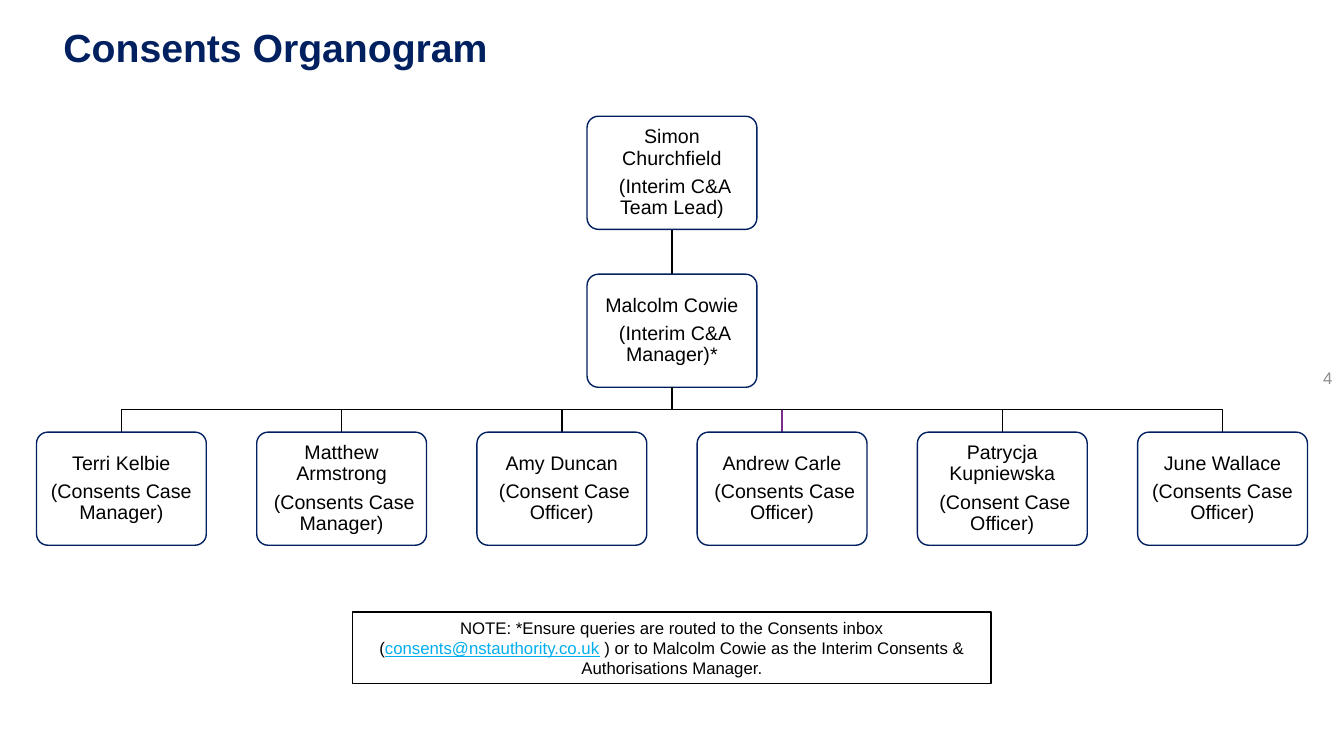
from pptx import Presentation
from pptx.dml.color import RGBColor
from pptx.enum.shapes import MSO_CONNECTOR as Link, MSO_SHAPE as Preset
from pptx.enum.text import MSO_ANCHOR as Anchor, PP_ALIGN as Align
from pptx.oxml.ns import qn
from pptx.util import Cm, Pt
from lxml.etree import SubElement

NAVY, BLACK, WHITE = "002060", "000000", "FFFFFF"
PURPLE, GREY, CYAN = "782D8D", "8C8C8C", "00AEEF"
CARD_WIDTH, CARD_HEIGHT = Cm(4.28), Cm(2.85)
COLUMN_STEP, LEVEL_STEP = Cm(5.55), Cm(3.98)

LEADERS = [
    ("Simon Churchfield", " (Interim C&A Team Lead)"),
    ("Malcolm Cowie", " (Interim C&A Manager)*"),
]
CASE_TEAM = [
    ("Terri Kelbie", "(Consents Case Manager)", BLACK),
    ("Matthew Armstrong", " (Consents Case Manager)", BLACK),
    ("Amy Duncan", " (Consent Case Officer)", BLACK),
    ("Andrew Carle", " (Consents Case Officer)", PURPLE),
    ("Patrycja Kupniewska", " (Consent Case Officer)", BLACK),
    ("June Wallace", "(Consents Case Officer)", BLACK),
]


def colour(value):
    """Return the colour for a hex string."""
    return RGBColor.from_string(value)


def style(run, size, hue, bold=False):
    """Format one run of text."""
    run.font.name = "Arial"
    run.font.size = Pt(size)
    run.font.bold = bold
    run.font.color.rgb = colour(hue)


def outline(part, hue):
    """Give a part a one-point line."""
    part.line.color.rgb = colour(hue)
    part.line.width = Pt(1)


def text_area(slide, left, top, width, height, anchor=Anchor.TOP):
    """Add a wrapping text box and return it."""
    area = slide.shapes.add_textbox(left, top, width, height)
    area.text_frame.word_wrap = True
    area.text_frame.vertical_anchor = anchor
    return area


def add_title(slide, left, top, width, height):
    """Write the slide heading."""
    frame = text_area(slide, left, top, width, height).text_frame
    frame.margin_left = frame.margin_top = 0
    frame.text = "Consents Organogram"
    heading = frame.paragraphs[0]
    heading.line_spacing = 0.9
    style(heading.runs[0], 28, NAVY, bold=True)


def add_card(slide, centre, top, person, role):
    """Draw one person's card centred on a column."""
    card = slide.shapes.add_shape(
        Preset.ROUNDED_RECTANGLE, centre - CARD_WIDTH // 2, top, CARD_WIDTH, CARD_HEIGHT)
    card.adjustments[0] = 0.1
    card.shadow.inherit = False
    card.fill.solid()
    card.fill.fore_color.rgb = colour(WHITE)
    outline(card, NAVY)
    frame = card.text_frame
    frame.word_wrap = True
    frame.vertical_anchor = Anchor.MIDDLE
    frame.margin_left = frame.margin_right = Cm(0.16)
    frame.margin_top = frame.margin_bottom = Cm(0.16)
    frame.text = f"{person}\n{role}"
    for paragraph in frame.paragraphs:
        paragraph.alignment = Align.CENTER
        paragraph.line_spacing = 0.9
        paragraph.space_after = Pt(5)
        style(paragraph.runs[0], 14, BLACK)


def add_leader_link(slide, centre, top, bottom):
    """Join the two leaders with a straight line."""
    link = slide.shapes.add_connector(Link.STRAIGHT, centre, top, centre, bottom)
    outline(link, BLACK)
    SubElement(link.element.spPr, qn("a:effectLst"))


def add_branch(slide, start, end, top, bottom, hue):
    """Draw a bent line from the manager down to one column."""
    middle = (top + bottom) // 2
    builder = slide.shapes.build_freeform(start, top)
    builder.add_line_segments([(start, middle), (end, middle), (end, bottom)], close=False)
    branch = builder.convert_to_shape()
    branch.shadow.inherit = False
    branch.fill.background()
    outline(branch, hue)


def add_organogram(slide, centre, top):
    """Lay out the leaders and the case team below them."""
    manager_top = top + LEVEL_STEP
    team_top = manager_top + LEVEL_STEP
    add_leader_link(slide, centre, top + CARD_HEIGHT, manager_top)
    for level, (person, role) in enumerate(LEADERS):
        add_card(slide, centre, top + level * LEVEL_STEP, person, role)
    first_column = centre - COLUMN_STEP * (len(CASE_TEAM) - 1) // 2
    for column, (person, role, hue) in enumerate(CASE_TEAM):
        column_centre = first_column + column * COLUMN_STEP
        add_branch(slide, centre, column_centre, manager_top + CARD_HEIGHT, team_top, hue)
        add_card(slide, column_centre, team_top, person, role)


def add_note(slide, left, top, width, height):
    """Write the framed note on where queries go."""
    note = text_area(slide, left, top, width, height, Anchor.MIDDLE)
    outline(note, BLACK)
    paragraph = note.text_frame.paragraphs[0]
    paragraph.alignment = Align.CENTER
    wording = [
        ("NOTE: *Ensure queries are routed to the Consents inbox (", BLACK),
        ("consents@nstauthority.co.uk", CYAN),
        (" ) or to Malcolm Cowie as the Interim Consents & Authorisations Manager.", BLACK),
    ]
    for words, hue in wording:
        run = paragraph.add_run()
        run.text = words
        style(run, 12, hue)
        run.font.underline = hue == CYAN


def add_page_number(slide, left, top, width, height):
    """Write the page number at the right edge."""
    frame = text_area(slide, left, top, width, height, Anchor.MIDDLE).text_frame
    frame.text = "4"
    number = frame.paragraphs[0]
    number.alignment = Align.RIGHT
    style(number.runs[0], 12, GREY)


def main():
    """Build the slide and save it."""
    deck = Presentation()
    deck.slide_width, deck.slide_height = Cm(33.87), Cm(19.05)
    slide = deck.slides.add_slide(deck.slide_layouts[6])
    add_title(slide, Cm(1.6), Cm(0.71), Cm(19.71), Cm(1.4))
    add_organogram(slide, deck.slide_width // 2, Cm(2.93))
    add_note(slide, Cm(8.89), Cm(15.42), Cm(16.09), Cm(1.8))
    add_page_number(slide, Cm(31.53), Cm(8.92), Cm(2.3), Cm(1.22))
    deck.save("out.pptx")


if __name__ == "__main__":
    main()
